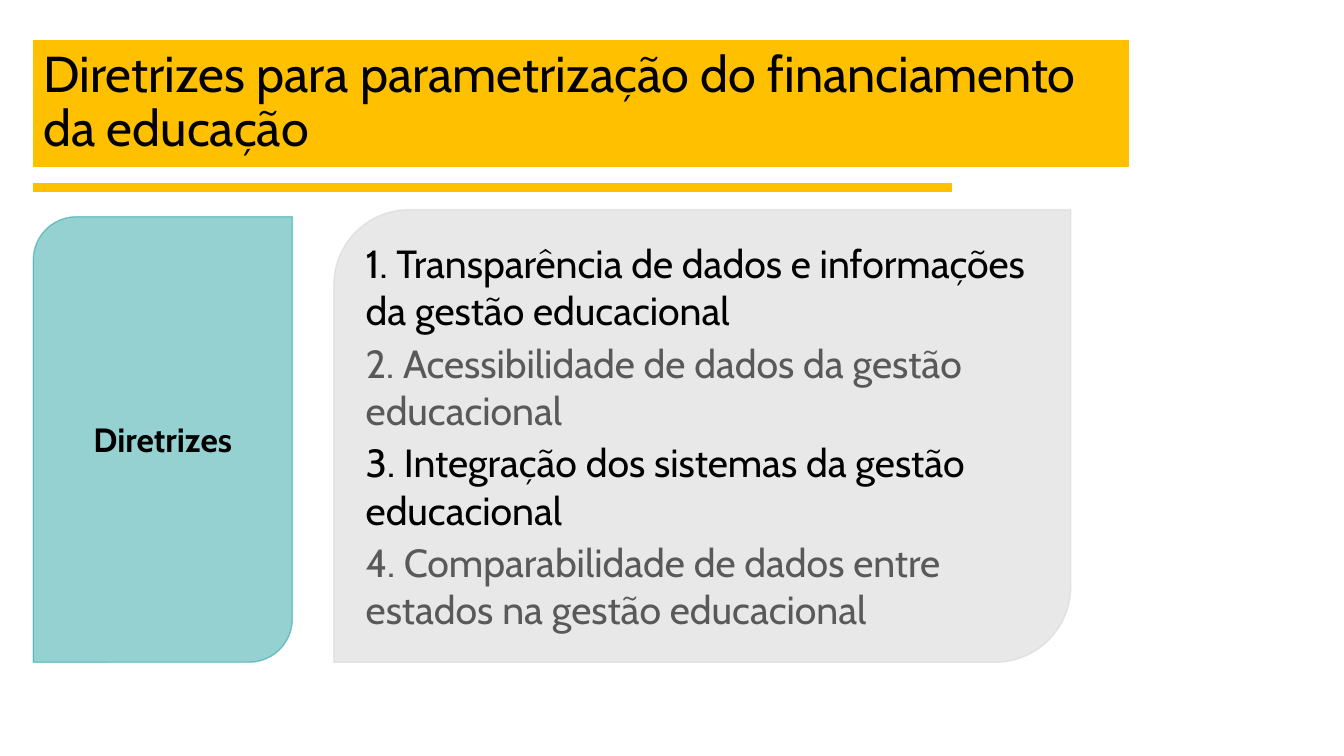
from lxml import etree
from pptx import Presentation
from pptx import util as u
from pptx.dml.color import RGBColor
from pptx.enum import shapes, text
from pptx.oxml.ns import qn

PX = 9144
AMBER = RGBColor(0xFF, 0xC0, 0x00)
TEAL = RGBColor(0x00, 0x91, 0x93)
SILVER = RGBColor(0xC9, 0xC9, 0xC9)
EDGE = RGBColor(0xD0, 0xCE, 0xCE)
BLACK = RGBColor(0x00, 0x00, 0x00)
GRAY = RGBColor(0x59, 0x59, 0x59)


def write(p, words, size, color, bold, **fmt):
    for name, value in fmt.items():
        setattr(p, name, value)
    r = p.add_run()
    r.text = words
    for name, value in dict(name="Cabin", size=u.Pt(size), bold=bold).items():
        setattr(r.font, name, value)
    r.font.color.rgb = color


def paint(sp, fill, line, width):
    sp.fill.solid()
    sp.fill.fore_color.rgb = fill
    sp.line.color.rgb = line
    sp.line.width = u.Pt(width)


prs = Presentation()
prs.slide_width, prs.slide_height = 1333 * PX, 750 * PX
s = prs.slides.add_slide(prs.slide_layouts[5])

rule = s.shapes.add_connector(
    shapes.MSO_CONNECTOR.STRAIGHT, 33 * PX, 186 * PX, 944 * PX, 186 * PX)
rule.line.color.rgb = AMBER
rule.line.width = u.Pt(6)
etree.SubElement(rule._element.spPr, qn("a:effectLst"))

title = s.shapes.title
box = dict(left=33, top=40, width=1086, height=125)
for name, value in box.items():
    setattr(title, name, value * PX)
paint(title, AMBER, AMBER, 0.75)
tf = title.text_frame
frame = dict(word_wrap=True, auto_size=text.MSO_AUTO_SIZE.NONE,
             vertical_anchor=text.MSO_ANCHOR.MIDDLE)
for name, value in frame.items():
    setattr(tf, name, value)
write(tf.paragraphs[0], "Diretrizes para parametrização do financiamento da educação",
      36, BLACK, False, alignment=text.PP_ALIGN.LEFT, line_spacing=0.9)

label_fmt = dict(alignment=text.PP_ALIGN.CENTER, space_before=u.Pt(12))
item_fmt = dict(alignment=text.PP_ALIGN.LEFT, space_before=u.Pt(2), space_after=u.Pt(2))
items = [
    ("1. Transparência de dados e informações da gestão educacional", BLACK),
    ("2. Acessibilidade de dados da gestão educacional", GRAY),
    ("3. Integração dos sistemas da gestão educacional", BLACK),
    ("4. Comparabilidade de dados entre estados na gestão educacional", GRAY),
]
panels = [
    ((33, 215, 257, 442), TEAL, TEAL, 24, True, label_fmt, [("Diretrizes", BLACK)]),
    ((331, 208, 731, 449), SILVER, EDGE, 28, False, item_fmt, items),
]
for place, fill, line, size, bold, fmt, lines in panels:
    sp = s.shapes.add_shape(shapes.MSO_SHAPE.ROUND_2_DIAG_RECTANGLE,
                            *(v * PX for v in place))
    sp.shadow.inherit = False
    paint(sp, fill, line, 1)
    for clr in sp._element.spPr.iter(qn("a:srgbClr")):
        etree.SubElement(clr, qn("a:alpha"), val="41000")
    tf = sp.text_frame
    for name, value in frame.items():
        setattr(tf, name, value)
    for i, (words, color) in enumerate(lines):
        p = tf.add_paragraph() if i else tf.paragraphs[0]
        write(p, words, size, color, bold, **fmt)

prs.save("out.pptx")
